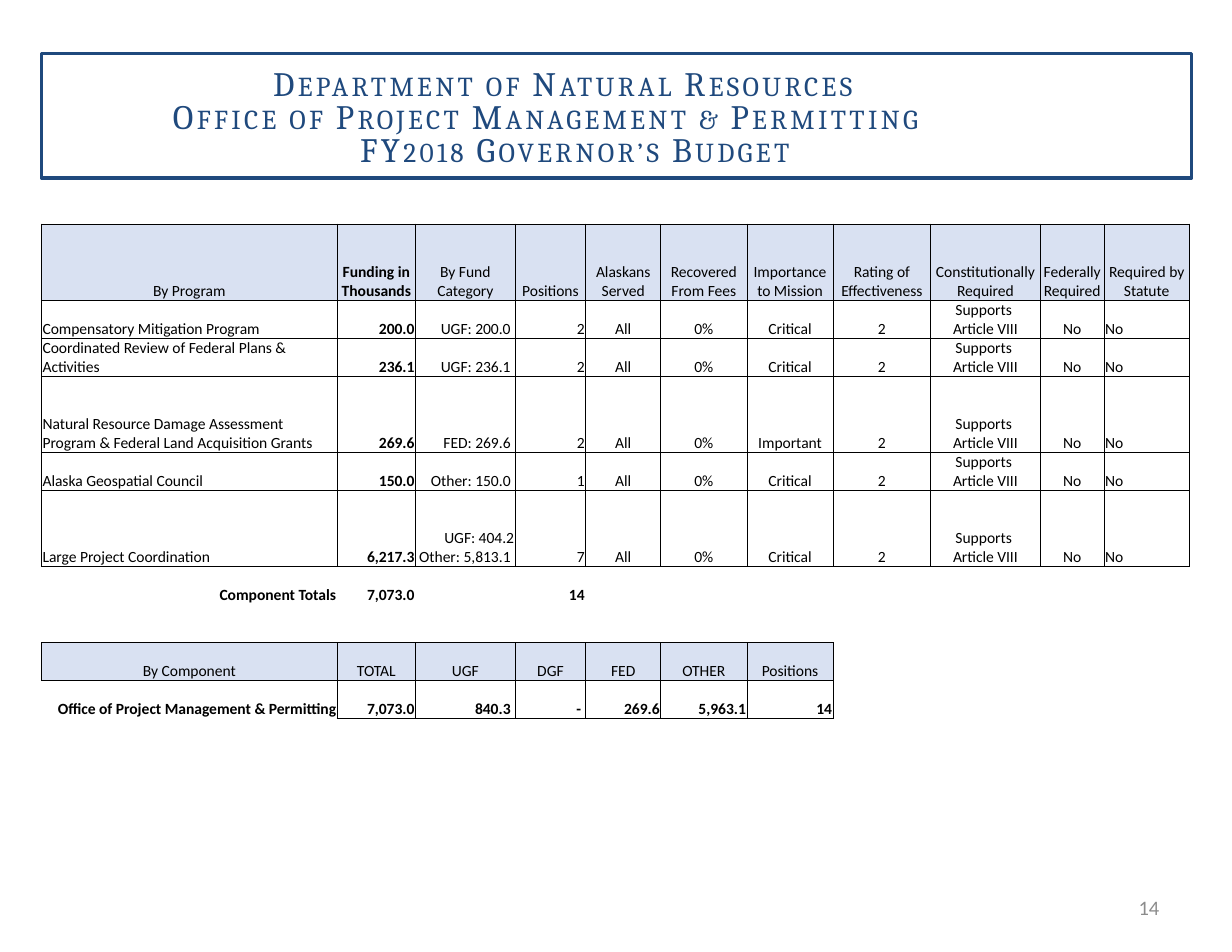
from lxml.etree import SubElement
from pptx import Presentation
from pptx.dml.color import RGBColor
from pptx.enum.shapes import MSO_SHAPE
from pptx.enum.text import MSO_ANCHOR as ANCHOR, PP_ALIGN as ALIGN
from pptx.oxml.ns import qn
from pptx.util import Inches, Pt

NAVY = RGBColor(0x1F, 0x49, 0x7D)
GRAY = RGBColor(0x8C, 0x8C, 0x8C)
BLACK = RGBColor(0, 0, 0)
WHITE = RGBColor(0xFF, 0xFF, 0xFF)
HEADER_BLUE = RGBColor(0xD9, 0xE1, 0xF2)
NO_STYLE = "{2D5ABB26-0587-4C30-8999-92F81FD0307C}"

TITLE_LINES = [
    "Department of Natural Resources",
    "Office of Project Management & Permitting",
    "FY2018 Governor’s Budget",
]
PAGE_NUMBER = "14"

PROGRAM_HEADER = [
    "By Program", "Funding in Thousands", "By Fund Category", "Positions",
    "Alaskans Served", "Recovered From Fees", "Importance to Mission",
    "Rating of Effectiveness", "Constitutionally Required",
    "Federally Required", "Required by Statute",
]
# program, funding, fund category, positions, importance
PROGRAMS = [
    ("Compensatory Mitigation Program", "200.0", "UGF: 200.0 ", "2", "Critical"),
    ("Coordinated Review of Federal Plans & Activities", "236.1", "UGF: 236.1 ", "2", "Critical"),
    ("Natural Resource Damage Assessment Program & Federal Land Acquisition Grants",
     "269.6", "FED: 269.6 ", "2", "Important"),
    ("Alaska Geospatial Council", "150.0", "Other: 150.0 ", "1", "Critical"),
    ("Large Project Coordination", "6,217.3", "UGF: 404.2\vOther: 5,813.1 ", "7", "Critical"),
]
TOTALS = ["Component Totals", "7,073.0", "", "14"]
COMPONENT_HEADER = ["By Component", "TOTAL", "UGF", "DGF", "FED", "OTHER", "Positions"]
COMPONENT = ["Office of Project Management & Permitting",
             "7,073.0", "840.3 ", "- ", "269.6", "5,963.1", "14"]

COLUMN_WIDTHS = [2.64, 0.7, 0.89, 0.63, 0.67, 0.77, 0.77, 0.87, 0.98, 0.57, 0.76]
ROW_HEIGHT = 0.34
TALL_ROWS = {0, 3, 5}  # twice the height of the others
PROGRAM_ALIGN = [ALIGN.LEFT] + [ALIGN.RIGHT] * 3 + [ALIGN.CENTER] * 6 + [ALIGN.LEFT]


def set_borders(cell, sides):
    """Draw thin black lines on the given sides (L, R, T, B) and none elsewhere."""
    properties = cell._tc.get_or_add_tcPr()
    for side in "LRTB":
        line = SubElement(properties, qn(f"a:ln{side}"), w=str(Pt(0.5)))
        if side in sides:
            fill = SubElement(line, qn("a:solidFill"))
            SubElement(fill, qn("a:srgbClr"), val=str(BLACK))
        else:
            SubElement(line, qn("a:noFill"))


def fill_cell(cell, text="", align=ALIGN.LEFT, bold=False, fill=None, sides=""):
    cell.margin_left = cell.margin_right = Inches(0.01)
    cell.margin_top = cell.margin_bottom = 0
    cell.vertical_anchor = ANCHOR.BOTTOM
    cell.text = text
    for paragraph in cell.text_frame.paragraphs:
        paragraph.alignment = align
        font = paragraph.font
        font.name, font.size, font.bold, font.color.rgb = "Calibri", Pt(10), bold, BLACK
    set_borders(cell, sides)
    if fill is None:
        cell.fill.background()
    else:
        cell.fill.solid()
        cell.fill.fore_color.rgb = fill


def add_title(slide):
    frame = slide.shapes.add_shape(MSO_SHAPE.RECTANGLE, Inches(0.37), Inches(0.48),
                                   Inches(10.27), Inches(1.11))
    frame.shadow.inherit = False
    frame.fill.background()
    frame.line.color.rgb = NAVY
    frame.line.width = Pt(2.25)

    title = slide.shapes.add_textbox(Inches(0.64), Inches(0.58), Inches(9.72), Inches(1.29))
    title.text_frame.word_wrap = True
    title.text_frame.text = "\n".join(TITLE_LINES)
    for paragraph in title.text_frame.paragraphs:
        paragraph.alignment = ALIGN.CENTER
        paragraph.line_spacing = 0.8
        font = paragraph.font
        font.name, font.size, font.color.rgb = "Cambria", Pt(22), NAVY
        for run in paragraph.runs:
            properties = run._r.get_or_add_rPr()
            properties.set("cap", "small")
            properties.set("spc", "220")


def add_page_number(slide):
    number = slide.shapes.add_textbox(Inches(7.88), Inches(7.88), Inches(2.57), Inches(0.45))
    number.text_frame.word_wrap = True
    number.text_frame.vertical_anchor = ANCHOR.MIDDLE
    number.text_frame.text = PAGE_NUMBER
    paragraph = number.text_frame.paragraphs[0]
    paragraph.alignment = ALIGN.RIGHT
    font = paragraph.font
    font.name, font.size, font.color.rgb = "Calibri", Pt(13.2), GRAY


def add_budget_table(slide):
    totals_row = len(PROGRAMS) + 1
    gap_row, component_row = totals_row + 1, totals_row + 2
    heights = [ROW_HEIGHT * (2 if row in TALL_ROWS else 1) for row in range(component_row + 2)]
    table = slide.shapes.add_table(
        len(heights), len(COLUMN_WIDTHS), Inches(0.37), Inches(2),
        Inches(sum(COLUMN_WIDTHS)), Inches(sum(heights))).table
    table.first_row = table.horz_banding = False
    table._tbl.tblPr.find(qn("a:tableStyleId")).text = NO_STYLE
    for column, width in zip(table.columns, COLUMN_WIDTHS):
        column.width = Inches(width)
    for row, height in zip(table.rows, heights):
        row.height = Inches(height)

    for col, text in enumerate(PROGRAM_HEADER):
        fill_cell(table.cell(0, col), text, ALIGN.CENTER, col == 1, HEADER_BLUE, "LRTB")

    for row, (program, funding, category, positions, importance) in enumerate(PROGRAMS, 1):
        values = [program, funding, category, positions, "All", "0%", importance, "2",
                  "Supports \vArticle VIII", "No", "No"]
        for col, (text, align) in enumerate(zip(values, PROGRAM_ALIGN)):
            fill_cell(table.cell(row, col), text, align, col == 1, WHITE, "LRTB")

    for col in range(len(COLUMN_WIDTHS)):
        total = TOTALS[col] if col < len(TOTALS) else ""
        fill_cell(table.cell(totals_row, col), total, ALIGN.RIGHT, True,
                  WHITE if col < 3 else None, "T")
        gap, header, value = (table.cell(gap_row + step, col) for step in range(3))
        if col < len(COMPONENT):
            fill_cell(gap, fill=WHITE, sides="B")
            fill_cell(header, COMPONENT_HEADER[col], ALIGN.CENTER, False, HEADER_BLUE, "LRTB")
            fill_cell(value, COMPONENT[col], ALIGN.RIGHT, True,
                      None if col else WHITE, "LRTB" if col else "TR")
        else:
            fill_cell(gap)
            for cell in (header, value):
                fill_cell(cell, sides="L" if col == len(COMPONENT) else "")


def main():
    deck = Presentation()
    deck.slide_width, deck.slide_height = Inches(11), Inches(8.5)
    slide = deck.slides.add_slide(deck.slide_layouts[6])
    add_page_number(slide)
    add_title(slide)
    add_budget_table(slide)
    deck.save("out.pptx")


if __name__ == "__main__":
    main()
